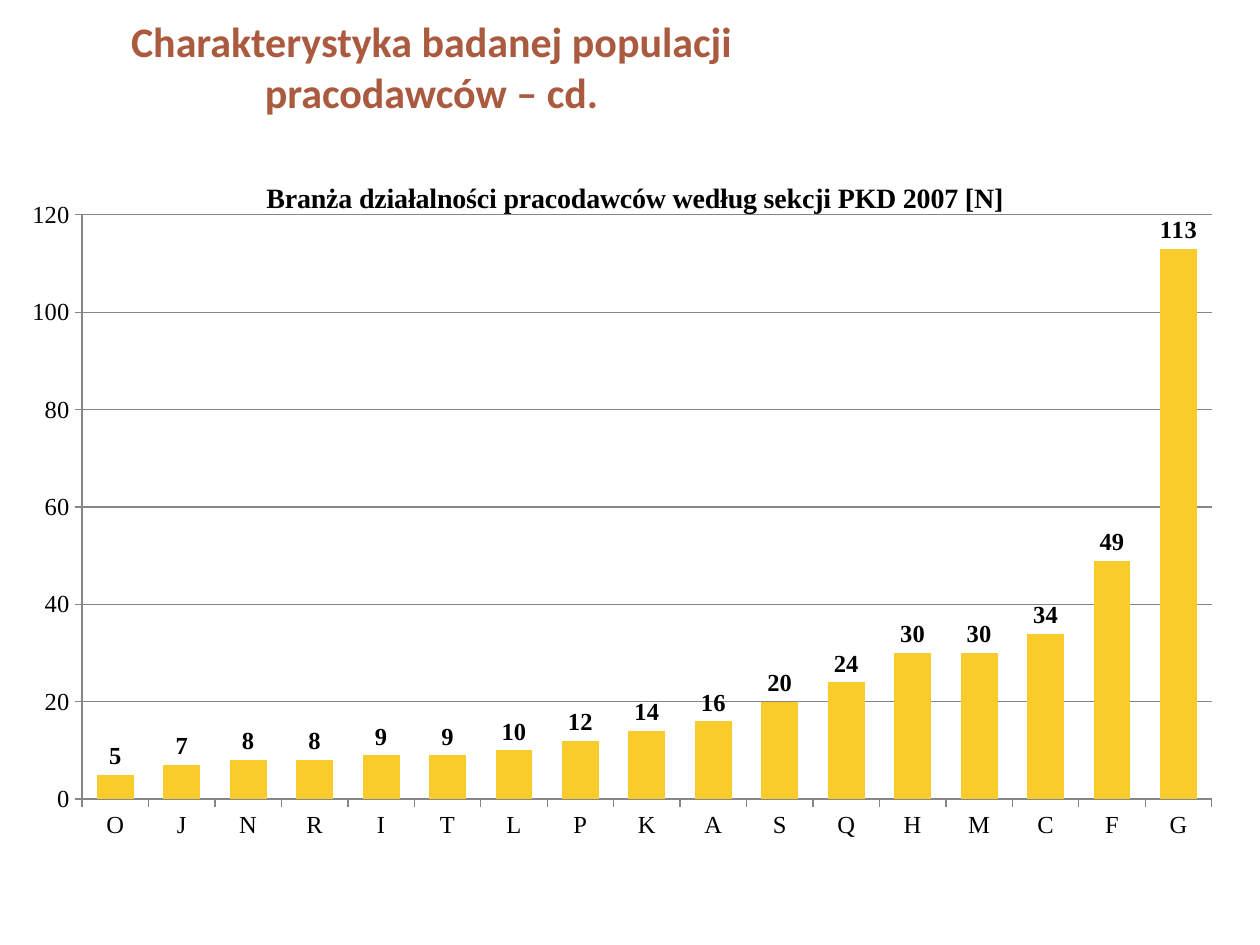
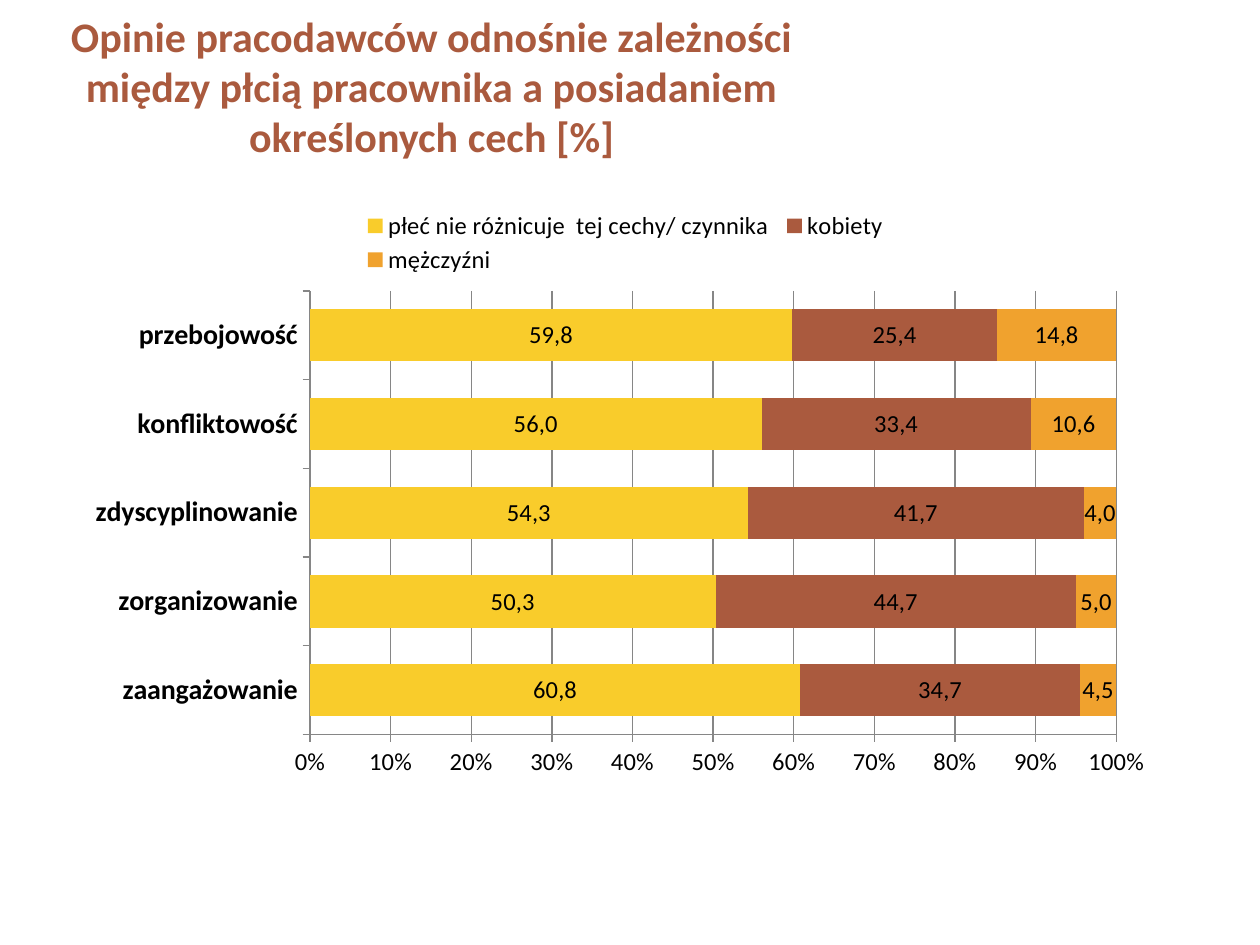
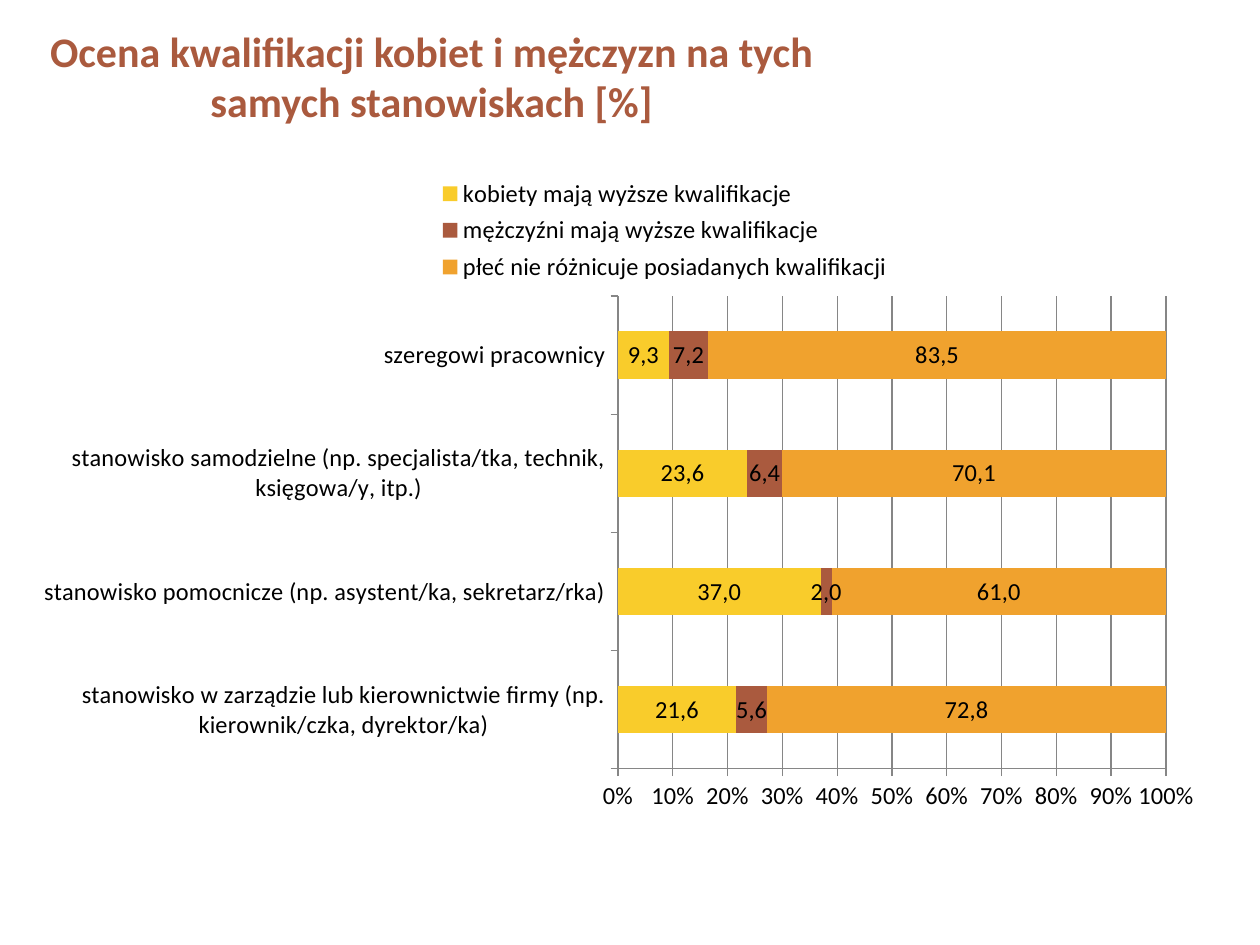
from dataclasses import dataclass

from lxml import etree
from pptx import Presentation
from pptx.chart.data import CategoryChartData
from pptx.dml.color import RGBColor
from pptx.enum import chart as charts, text
from pptx.oxml.ns import qn
from pptx.util import Inches, Pt


@dataclass(frozen=True)
class Theme:
    series: tuple[str, ...] = ("F9CC2B", "AA5A3E", "F0A22E")
    title: str = "AA5A3E"
    ink: str = "000000"
    grid: str = "868686"
    title_font: str = "Calibri"
    title_size: int = 24
    chart_title_size: int = 16
    chart_size: int = 14


@dataclass(frozen=True)
class Box:
    left: float
    top: float
    width: float = 0
    height: float = 0


@dataclass(frozen=True)
class ChartSlide:
    """Frame in inches; plot, legend and heading places in percent of the chart."""
    title: str
    title_height: float
    frame: Box
    plot: Box
    categories: tuple[str, ...]
    series: dict[str, tuple[float, ...]]
    gap: int
    font: str = "Calibri"
    heading: str = ""
    heading_place: Box | None = None
    legend: Box | None = None
    bold_category_size: int = 0


THEME = Theme()
SLIDE_WIDTH, SLIDE_HEIGHT = 10, 7.5
TITLE_LEFT, TITLE_TOP, TITLE_WIDTH = 0.12, 0.13, 6.61

SLIDES = (
    ChartSlide(
        title="Charakterystyka badanej populacji pracodawców – cd.",
        title_height=0.79,
        frame=Box(0.2, 1.15, 9.61, 5.51),
        plot=Box(4.7, 10.1, 93.3, 84.3),
        categories=tuple("OJNRITLPKASQHMCFG"),
        series={"Pracodawcy": (5, 7, 8, 8, 9, 9, 10, 12, 14, 16, 20, 24, 30, 30, 34, 49, 113)},
        gap=80,
        font="Times New Roman",
        heading="Branża działalności pracodawców według sekcji PKD 2007 [N]",
        heading_place=Box(19.5, 4.3),
    ),
    ChartSlide(
        title="Opinie pracodawców odnośnie zależności między płcią pracownika "
              "a posiadaniem określonych cech [%]",
        title_height=1.1,
        frame=Box(0.59, 1.55, 8.66, 4.72),
        plot=Box(21.6, 16.1, 73.9, 74.6),
        categories=("zaangażowanie", "zorganizowanie", "zdyscyplinowanie",
                    "konfliktowość", "przebojowość"),
        series={
            "płeć nie różnicuje  tej cechy/ czynnika": (0.608, 0.503, 0.543, 0.56, 0.598),
            "kobiety": (0.347, 0.447, 0.417, 0.334, 0.254),
            "mężczyźni": (0.045, 0.05, 0.04, 0.106, 0.148),
        },
        gap=70,
        legend=Box(26, 2, 49, 12),
        bold_category_size=16,
    ),
    ChartSlide(
        title="Ocena kwalifikacji kobiet i mężczyzn na tych samych stanowiskach [%]",
        title_height=0.94,
        frame=Box(0.35, 1.15, 9.37, 5.43),
        plot=Box(48.3, 22.1, 46.7, 69.1),
        categories=(
            "stanowisko w zarządzie lub kierownictwie firmy (np. kierownik/czka, dyrektor/ka)",
            "stanowisko pomocnicze (np. asystent/ka, sekretarz/rka)",
            "stanowisko samodzielne (np. specjalista/tka, technik, księgowa/y, itp.)",
            "szeregowi pracownicy",
        ),
        series={
            "kobiety mają wyższe kwalifikacje": (0.216, 0.37, 0.236, 0.093),
            "mężczyźni mają wyższe kwalifikacje": (0.056, 0.02, 0.064, 0.072),
            "płeć nie różnicuje posiadanych kwalifikacji": (0.728, 0.61, 0.701, 0.835),
        },
        gap=150,
        legend=Box(32.3, 4, 40, 17),
    ),
)


def style_font(font, name: str, size: int, color: str, bold: bool) -> None:
    font.name, font.size, font.bold = name, Pt(size), bold
    font.color.rgb = RGBColor.from_string(color)


def place(part, box: Box, index: int, inner: bool = False) -> None:
    """Give a chart part a fixed layout, inserted as its child number index."""
    for old in part.findall(qn("c:layout")):
        part.remove(old)
    layout = etree.Element(qn("c:layout"))
    manual = etree.SubElement(layout, qn("c:manualLayout"))
    settings = {"layoutTarget": "inner"} if inner else {}
    settings |= {"xMode": "edge", "yMode": "edge"}
    shares = {"x": box.left, "y": box.top}
    if box.width:
        shares |= {"w": box.width, "h": box.height}
    settings |= {tag: f"{percent / 100:.3f}" for tag, percent in shares.items()}
    for tag, value in settings.items():
        etree.SubElement(manual, qn(f"c:{tag}")).set("val", value)
    part.insert(index, layout)


def add_title(slide, content: ChartSlide) -> None:
    title = slide.shapes.title
    title.left, title.top = Inches(TITLE_LEFT), Inches(TITLE_TOP)
    title.width, title.height = Inches(TITLE_WIDTH), Inches(content.title_height)
    frame = title.text_frame
    frame.text = content.title
    frame.auto_size = text.MSO_AUTO_SIZE.NONE
    frame.vertical_anchor = text.MSO_ANCHOR.MIDDLE
    paragraph = frame.paragraphs[0]
    paragraph.alignment = text.PP_ALIGN.CENTER
    style_font(paragraph.font, THEME.title_font, THEME.title_size, THEME.title, True)


def style_axes(chart, content: ChartSlide, number_format: str) -> None:
    grid_color = RGBColor.from_string(THEME.grid)
    values, categories = chart.value_axis, chart.category_axis
    values.has_major_gridlines = True
    for line in (values.format.line, categories.format.line, values.major_gridlines.format.line):
        line.color.rgb = grid_color
        line.width = Pt(0.75)
    for axis in (values, categories):
        axis.major_tick_mark = charts.XL_TICK_MARK.OUTSIDE
    values.tick_labels.number_format = number_format
    values.tick_labels.number_format_is_linked = False
    if content.bold_category_size:
        style_font(categories.tick_labels.font, content.font,
                   content.bold_category_size, THEME.ink, True)


def style_series(series, color: str, content: ChartSlide, stacked: bool) -> None:
    series.format.fill.solid()
    series.format.fill.fore_color.rgb = RGBColor.from_string(color)
    labels = series.data_labels
    labels.show_value = True
    labels.number_format = "0.0%" if stacked else "###0"
    labels.number_format_is_linked = False
    style_font(labels.font, content.font, THEME.chart_size, THEME.ink, True)
    if not stacked:
        labels.position = charts.XL_LABEL_POSITION.OUTSIDE_END
        return
    for index, share in enumerate(series.values):
        frame = series.points[index].data_label.text_frame
        frame.text = f"{share * 100:.1f}".replace(".", ",")
        style_font(frame.paragraphs[0].font, content.font, THEME.chart_size, THEME.ink, True)


def add_chart(slide, content: ChartSlide) -> None:
    stacked = len(content.series) > 1
    kind = charts.XL_CHART_TYPE.BAR_STACKED_100 if stacked else charts.XL_CHART_TYPE.COLUMN_CLUSTERED
    data = CategoryChartData()
    data.categories = content.categories
    for name, values in content.series.items():
        data.add_series(name, values)
    box = content.frame
    chart = slide.shapes.add_chart(kind, Inches(box.left), Inches(box.top),
                                   Inches(box.width), Inches(box.height), data).chart
    style_font(chart.font, content.font, THEME.chart_size, THEME.ink, False)

    chart.has_title = bool(content.heading)
    if content.heading:
        heading = chart.chart_title.text_frame
        heading.text = content.heading
        style_font(heading.paragraphs[0].font, content.font,
                   THEME.chart_title_size, THEME.ink, True)
        place(chart.chart_title._element, content.heading_place, 1)

    chart.has_legend = content.legend is not None
    if content.legend:
        chart.legend.position = charts.XL_LEGEND_POSITION.TOP
        chart.legend.include_in_layout = False
        place(chart.legend._element, content.legend, 1)

    bars = chart.plots[0]
    bars.gap_width = content.gap
    bars.overlap = 100 if stacked else 0
    bars.vary_by_categories = False
    for series, color in zip(bars.series, THEME.series):
        style_series(series, color, content, stacked)
    style_axes(chart, content, "0%" if stacked else "General")
    place(chart._chartSpace.chart.plotArea, content.plot, 0, inner=True)


def main() -> None:
    deck = Presentation()
    deck.slide_width, deck.slide_height = Inches(SLIDE_WIDTH), Inches(SLIDE_HEIGHT)
    title_only = deck.slide_layouts.get_by_name("Title Only")
    for content in SLIDES:
        slide = deck.slides.add_slide(title_only)
        add_title(slide, content)
        add_chart(slide, content)
    deck.save("out.pptx")


if __name__ == "__main__":
    main()
